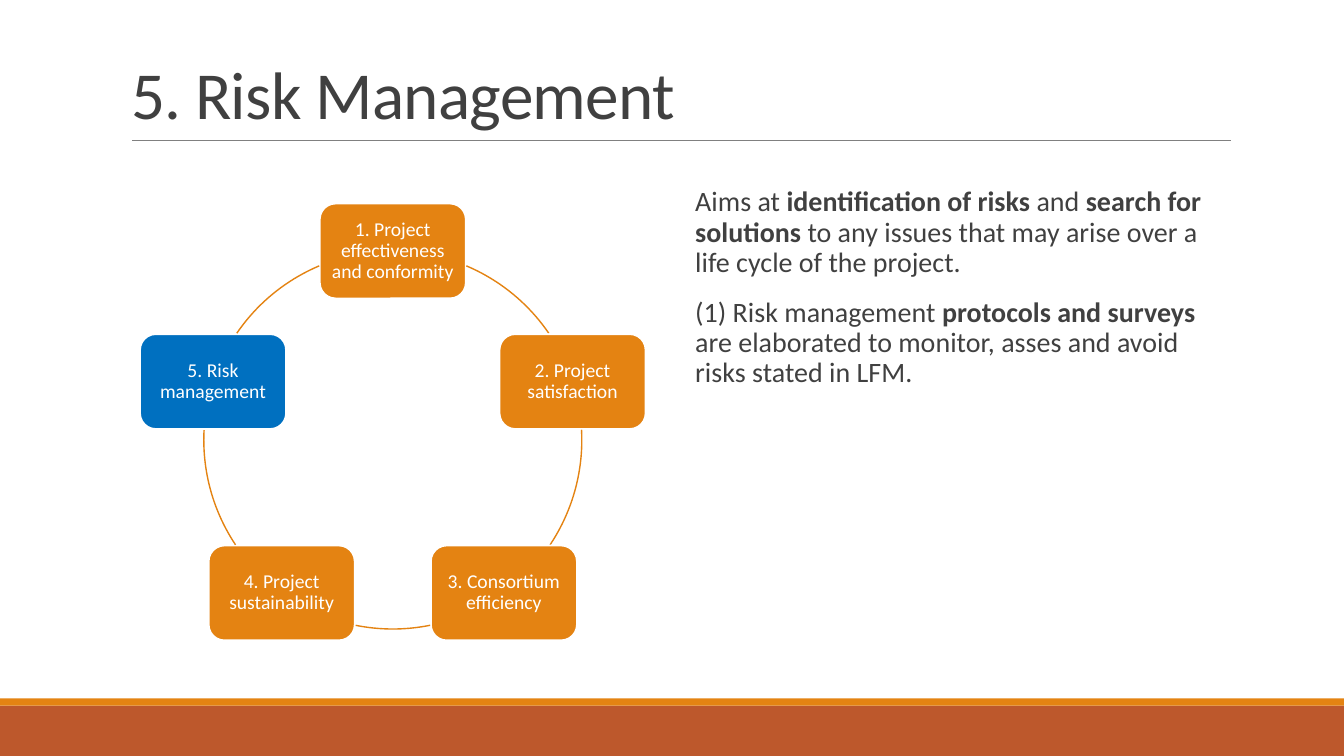
import math
from lxml import etree
from pptx import Presentation
from pptx import util as u
from pptx.dml.color import RGBColor
from pptx.enum import shapes, text
from pptx.oxml.ns import qn

ORANGE, RUST, BLUE, WHITE = "E48312", "BD582C", "0070C0", "FFFFFF"
DARK, GREY = "404040", "808080"
SLIDE_W, SLIDE_H = u.Cm(33.87), u.Cm(19.05)

STEPS = ["1. Project effectiveness and conformity", "2. Project satisfaction",
         "3. Consortium efficiency", "4. Project sustainability",
         "5. Risk management"]
CURRENT_STEP = 4
# Start and end of each arc, in degrees clockwise from the right
ARCS = [(292.9, 325.6), (356.9, 33.7), (78.6, 101.4), (146.3, 183.1), (214.4, 247.1)]

# Each paragraph is a list of (words, bold)
BODY = [
    [("Aims at ", False), ("identification of risks ", True), ("and ", False),
     ("search for solutions ", True),
     ("to any issues that may arise over a life cycle of the project.", False)],
    [("(1) Risk management ", False), ("protocols and surveys ", True),
     ("are elaborated to monitor, asses and avoid risks stated in LFM.", False)],
]


def color(value):
    return RGBColor.from_string(value)


def set_attrs(obj, **values):
    for name, value in values.items():
        setattr(obj, name, value)


def set_line(line, value, width):
    line.color.rgb = color(value)
    line.width = u.Pt(width)


def add_run(p, words, size, value, bold=False):
    r = p.add_run()
    r.text = words
    set_attrs(r.font, name="Calibri", size=u.Pt(size), bold=bold)
    r.font.color.rgb = color(value)
    return r


def add_shape(s, kind, box, fill=None):
    """Add a preset shape without shadow or outline, filled only if a fill is given."""
    sp = s.shapes.add_shape(kind, *map(int, box))
    sp.shadow.inherit = False
    sp.line.fill.background()
    if fill:
        sp.fill.solid()
        sp.fill.fore_color.rgb = color(fill)
    else:
        sp.fill.background()
    return sp


def add_footer_bands(s, left, top, width, height):
    stripe = u.Cm(0.18)
    add_shape(s, shapes.MSO_SHAPE.RECTANGLE,
              (left, top + stripe, width, height - stripe), RUST)
    add_shape(s, shapes.MSO_SHAPE.RECTANGLE, (left, top, width, stripe), ORANGE)


def add_title(s, left, top, width, height):
    """Fill the title placeholder and rule a line below it."""
    sp = s.shapes.title
    set_attrs(sp, left=left, top=top, width=width, height=height)
    tf = sp.text_frame
    set_attrs(tf, vertical_anchor=text.MSO_ANCHOR.BOTTOM, word_wrap=True,
              auto_size=text.MSO_AUTO_SIZE.NONE)
    p = tf.paragraphs[0]
    set_attrs(p, alignment=text.PP_ALIGN.LEFT, line_spacing=0.85)
    r = add_run(p, "5. Risk Management", 48, DARK)
    r._r.get_or_add_rPr().set("spc", "-50")

    x, y = left + u.Cm(0.28), top + height + u.Cm(0.05)
    rule = s.shapes.add_connector(shapes.MSO_CONNECTOR.STRAIGHT,
                                  x, y, left + width + u.Cm(0.02), y)
    set_line(rule.line, GREY, 0.5)
    etree.SubElement(rule._element.spPr, qn("a:effectLst"))


def add_body(s, left, top, width, height):
    sp = s.placeholders[1]
    set_attrs(sp, left=left, top=top, width=width, height=height)
    tf = sp.text_frame
    set_attrs(tf, margin_left=0, margin_right=0, word_wrap=True,
              vertical_anchor=text.MSO_ANCHOR.TOP, auto_size=text.MSO_AUTO_SIZE.NONE)
    for i, runs in enumerate(BODY):
        p = tf.add_paragraph() if i else tf.paragraphs[0]
        set_attrs(p, line_spacing=0.9, space_before=u.Pt(12 if i else 0),
                  space_after=u.Pt(2))
        pPr = p._p.get_or_add_pPr()
        pPr.set("marL", str(u.Cm(0.25)))
        pPr.set("indent", "0")
        etree.SubElement(pPr, qn("a:buNone"))
        for words, bold in runs:
            add_run(p, words, 20, DARK, bold)


def add_step(s, label, fill, box):
    sp = add_shape(s, shapes.MSO_SHAPE.ROUNDED_RECTANGLE, box, fill)
    set_line(sp.line, WHITE, 1.25)
    tf = sp.text_frame
    inset = u.Cm(0.15)
    set_attrs(tf, word_wrap=True, vertical_anchor=text.MSO_ANCHOR.MIDDLE,
              margin_left=inset, margin_right=inset,
              margin_top=inset, margin_bottom=inset)
    p = tf.paragraphs[0]
    set_attrs(p, alignment=text.PP_ALIGN.CENTER, line_spacing=0.9)
    add_run(p, label, 14, WHITE)


def add_cycle(s, left, top, width):
    """Place the steps clockwise from the top on a circle, joined by arcs."""
    step_w, step_h = u.Cm(3.68), u.Cm(2.39)
    turn = 2 * math.pi / len(STEPS)
    radius = (width - step_w) / 2 / math.sin(turn)
    cx, cy = left + width / 2, top + step_h / 2 + radius
    for i, (label, (start, end)) in enumerate(zip(STEPS, ARCS)):
        x = cx + radius * math.sin(i * turn)
        y = cy - radius * math.cos(i * turn)
        add_step(s, label, BLUE if i == CURRENT_STEP else ORANGE,
                 (x - step_w / 2, y - step_h / 2, step_w, step_h))
        arc = add_shape(s, shapes.MSO_SHAPE.ARC,
                        (cx - radius, cy - radius, 2 * radius, 2 * radius))
        # Angles are stored in 60000ths of a degree, adjustments in 100000ths
        arc.adjustments[0], arc.adjustments[1] = start * 0.6, end * 0.6
        set_line(arc.line, ORANGE, 1)


def main():
    prs = Presentation()
    set_attrs(prs, slide_width=SLIDE_W, slide_height=SLIDE_H)
    s = prs.slides.add_slide(prs.slide_layouts[1])
    band_h = u.Cm(1.45)
    add_footer_bands(s, 0, SLIDE_H - band_h, SLIDE_W, band_h)
    add_title(s, u.Cm(3.05), u.Cm(0.79), u.Cm(27.94), u.Cm(2.69))
    add_body(s, u.Cm(17.27), u.Cm(4.6), u.Cm(13.72), u.Cm(11.71))
    add_cycle(s, u.Cm(3.53), u.Cm(5.13), u.Cm(12.74))
    prs.save("out.pptx")


if __name__ == "__main__":
    main()
